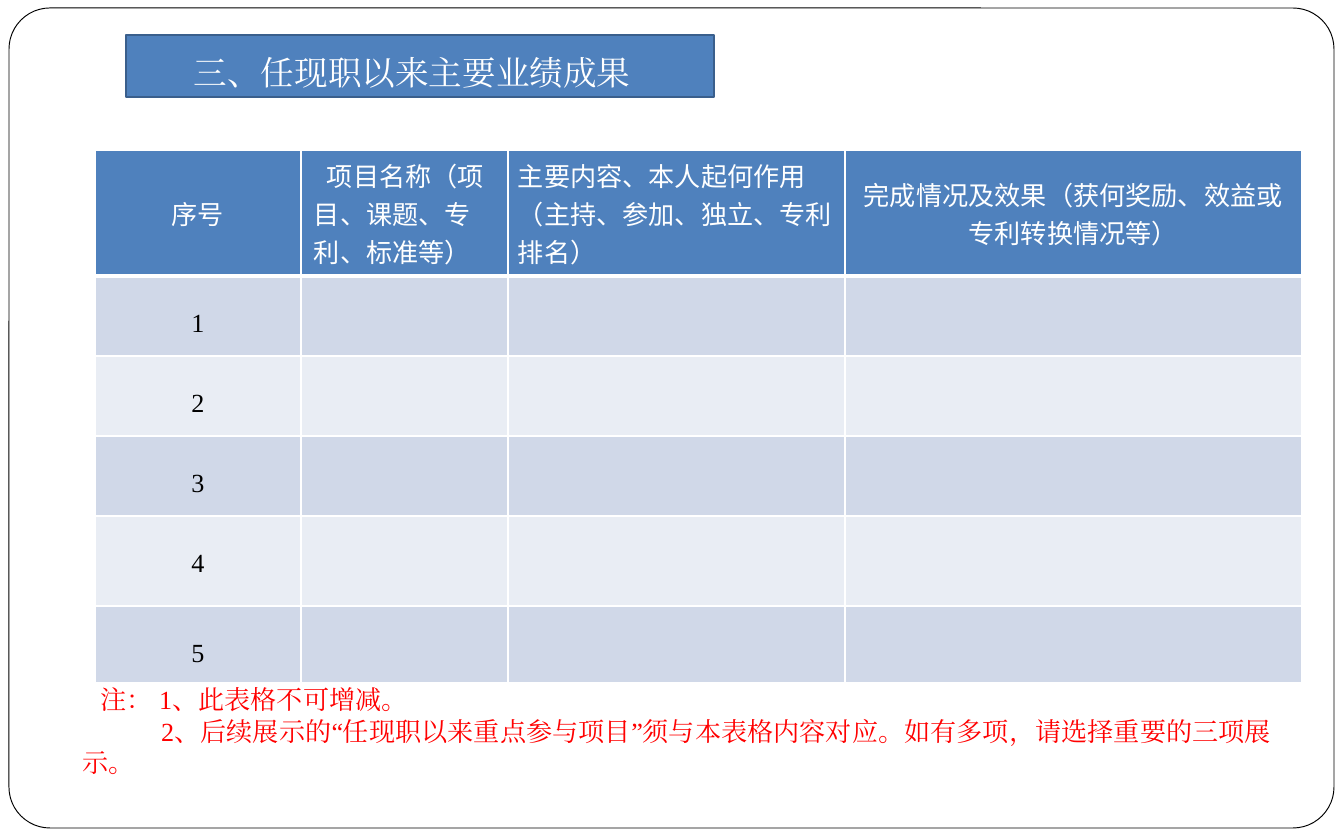
import lxml.etree
import pptx
import pptx.dml.color
import pptx.enum.shapes
import pptx.enum.text
import pptx.oxml.ns
import pptx.util

SCALE = 9144000 / 1344
SERIF, SANS = "Times New Roman", "Noto Sans CJK SC"
BLUE, WHITE = "4F81BD", "FFFFFF"
BANDS = ("D0D8E8", "E9EDF4")
ALIGN = pptx.enum.text.PP_ALIGN
ANCHOR = pptx.enum.text.MSO_ANCHOR

COLS = (206, 207, 337, 457)
ROWS = (126, 80, 80, 80, 90, 77)
# Header text, alignment, side margin, first-line indent
HEADS = (
    ("序号", ALIGN.CENTER, 13, 0),
    ("项目名称（项目、课题、专利、标准等）", ALIGN.LEFT, 13, 13),
    ("主要内容、本人起何作用（主持、参加、独立、专利排名）", ALIGN.LEFT, 10, 0),
    ("完成情况及效果（获何奖励、效益或专利转换情况等）", ALIGN.CENTER, 10, 0),
)
# Note text, first-line indent
NOTES = (
    ("注： 1、此表格不可增减。", 18),
    ("2、后续展示的“任现职以来重点参与项目”须与本表格内容对应。"
     "如有多项，请选择重要的三项展示。", 79),
)


def px(n):
    return pptx.util.Emu(round(n * SCALE))


def rgb(code):
    return pptx.dml.color.RGBColor.from_string(code)


def node(up, tag, **attrs):
    """Append a DrawingML child element."""
    return lxml.etree.SubElement(up, pptx.oxml.ns.qn(tag), **attrs)


def paint(shape, fill, line, width):
    shape.fill.solid()
    shape.fill.fore_color.rgb = rgb(fill)
    shape.line.color.rgb = rgb(line)
    shape.line.width = pptx.util.Pt(width)


def place(shape, left, top, width, height):
    shape.left, shape.top = px(left), px(top)
    shape.width, shape.height = px(width), px(height)


def write(para, text, size, color, font, align=ALIGN.LEFT, indent=0):
    para.alignment = align
    if indent:
        para._p.get_or_add_pPr().set("indent", str(px(indent)))
    run = para.add_run()
    run.text = text
    run.font.size = pptx.util.Pt(size)
    run.font.bold = False
    run.font.color.rgb = rgb(color)
    run.font.name = font
    node(run.font._rPr, "a:ea", typeface=font)


def edge(cell, base):
    """Draw white cell borders, with the given bottom width in points."""
    props = cell._tc.get_or_add_tcPr()
    sides = (("a:lnL", 1), ("a:lnR", 1), ("a:lnT", 1), ("a:lnB", base))
    for spot, (tag, width) in enumerate(sides):
        line = node(props, tag, w=str(pptx.util.Pt(width)))
        node(node(line, "a:solidFill"), "a:srgbClr", val=WHITE)
        props.insert(spot, line)


def pad(box, side, top, base):
    box.margin_left = box.margin_right = px(side)
    box.margin_top, box.margin_bottom = px(top), px(base)


def add_title(slide, text):
    title = slide.shapes.title
    place(title, 126, 35, 588, 62)
    node(node(title.element.spPr, "a:prstGeom", prst="homePlate"), "a:avLst")
    paint(title, BLUE, "3A5F8C", 1)
    frame = title.text_frame
    frame.auto_size = pptx.enum.text.MSO_AUTO_SIZE.NONE
    frame.vertical_anchor = ANCHOR.MIDDLE
    pad(frame, 0, 13, 0)
    frame.margin_right = px(16)
    write(frame.paragraphs[0], text, 18, WHITE, SERIF, ALIGN.CENTER)


def add_frame(slide):
    kind = pptx.enum.shapes.MSO_SHAPE.ROUNDED_RECTANGLE
    frame = slide.shapes.add_shape(kind, px(9), px(8), px(1325), px(820))
    frame.adjustments[0] = 0.05
    frame.shadow.inherit = False
    paint(frame, WHITE, "000000", 0.5)
    slide.shapes.title.element.addprevious(frame.element)


def add_grid(slide):
    table = slide.shapes.add_table(
        len(ROWS), len(COLS), px(95), px(150), px(sum(COLS)), px(sum(ROWS))
    ).table
    for col, width in zip(table.columns, COLS):
        col.width = px(width)
    for row, height in zip(table.rows, ROWS):
        row.height = px(height)
    for r in range(len(ROWS)):
        for c, (head, align, side, indent) in enumerate(HEADS):
            cell = table.cell(r, c)
            cell.fill.solid()
            cell.fill.fore_color.rgb = rgb(BANDS[(r - 1) % 2] if r else BLUE)
            edge(cell, 1 if r else 3)
            para = cell.text_frame.paragraphs[0]
            if r == 0:
                pad(cell, side, 0, 0)
                cell.vertical_anchor = ANCHOR.MIDDLE
                write(para, head, 14, WHITE, SANS, align, indent)
            elif c == 0:
                pad(cell, side, 33, 5)
                write(para, str(r), 14, "000000", SERIF, ALIGN.CENTER)


def add_notes(slide):
    box = slide.shapes.add_textbox(px(69), px(677), px(1235), px(163))
    frame = box.text_frame
    frame.word_wrap = True
    for i, (text, indent) in enumerate(NOTES):
        para = frame.add_paragraph() if i else frame.paragraphs[0]
        write(para, text, 14, "FF0000", SERIF, indent=indent)


def main():
    deck = pptx.Presentation()
    deck.slide_width, deck.slide_height = px(1344), px(840)
    slide = deck.slides.add_slide(deck.slide_layouts[5])
    add_title(slide, "三、任现职以来主要业绩成果")
    add_frame(slide)
    add_grid(slide)
    add_notes(slide)
    deck.save("out.pptx")


if __name__ == "__main__":
    main()
